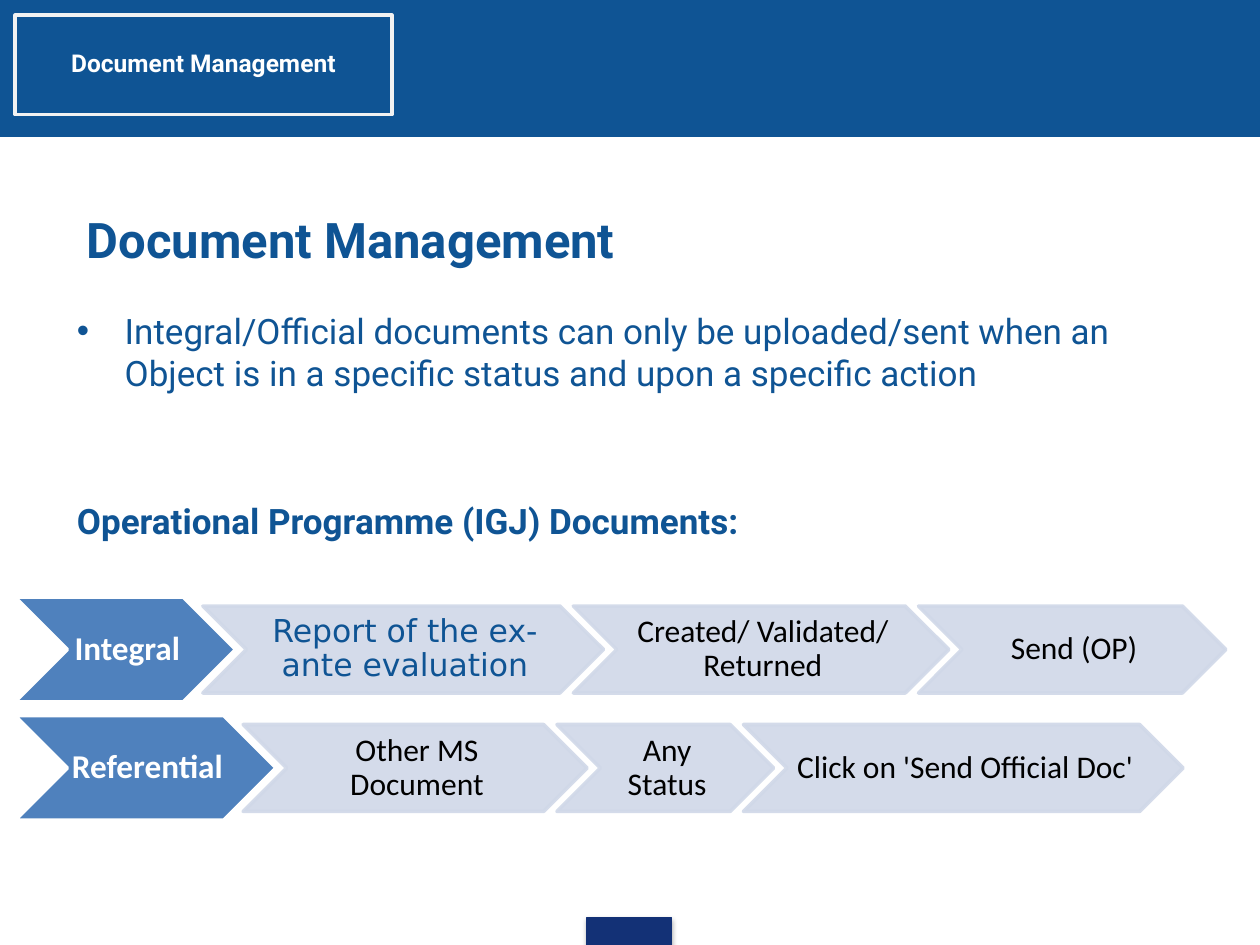
from lxml import etree
from pptx import Presentation
from pptx.dml.color import RGBColor
from pptx.enum import shapes, text
from pptx.oxml import parse_xml
from pptx.oxml.ns import nsdecls, qn
from pptx.util import Inches, Pt

BLUE, NAVY, WHITE = "0F5494", "133176", "FFFFFF"
LEAD = {"size": Pt(19), "name": "Calibri", "color": WHITE, "bold": True}
DETAIL = {"size": Pt(18), "name": "Calibri", "color": "000000"}
REPORT = {"size": Pt(18), "name": "DejaVu Sans", "color": BLUE}
BODY = {"size": Pt(20), "name": "Roboto", "color": BLUE}

ROW_LEFT, LEAD_HEIGHT, DETAIL_HEIGHT = 0.12, 0.83, 0.69
LEAD_OVERLAP, DETAIL_OVERLAP = 0.26, 0.24

# Each row: top, then (label, width, text format) per step
ROWS = [
    (4.74, [("Integral", 1.75, LEAD),
            ("Report of the ex-ante evaluation", 3.18, REPORT),
            ("Created/ Validated/ Returned", 2.98, DETAIL),
            ("Send (OP)", 2.44, DETAIL)]),
    (5.68, [("Referential", 2.07, LEAD),
            ("Other MS Document", 2.73, DETAIL),
            ("Any Status", 1.72, DETAIL),
            ("Click on 'Send Official Doc'", 3.49, DETAIL)]),
]


def rgb(color):
    return RGBColor.from_string(color)


def set_font(paragraph, style):
    for key, value in style.items():
        if key == "color":
            paragraph.font.color.rgb = rgb(value)
        else:
            setattr(paragraph.font, key, value)


def place(shape, left, top, width, height):
    box = {"left": left, "top": top, "width": width, "height": height}
    for side, value in box.items():
        setattr(shape, side, Inches(value))


def set_margins(frame, left, top, right, bottom):
    margins = {"left": left, "top": top, "right": right, "bottom": bottom}
    for side, value in margins.items():
        setattr(frame, f"margin_{side}", Inches(value))


def set_indent(paragraph, margin, first=0, bullet=None):
    properties = paragraph._p.get_or_add_pPr()
    properties.set("marL", str(Inches(margin)))
    properties.set("indent", str(Inches(first)))
    if bullet:
        etree.SubElement(properties, qn("a:buChar"), char=bullet)
    else:
        etree.SubElement(properties, qn("a:buNone"))


def add_block(slide, kind, box, fill, line, line_width):
    block = slide.shapes.add_shape(kind, *map(Inches, box))
    block.shadow.inherit = False
    if fill:
        block.fill.solid()
        block.fill.fore_color.rgb = rgb(fill)
    else:
        block.fill.background()
    block.line.color.rgb = rgb(line)
    block.line.width = Pt(line_width)
    return block


def add_label(block, label, style, margins):
    frame = block.text_frame
    frame.word_wrap = True
    frame.vertical_anchor = text.MSO_ANCHOR.MIDDLE
    set_margins(frame, *margins)
    paragraph = frame.paragraphs[0]
    paragraph.text = label
    paragraph.alignment = text.PP_ALIGN.CENTER
    paragraph.line_spacing = 0.9
    set_font(paragraph, style)


def make_translucent(block, percent):
    for color in block._element.spPr.iter(qn("a:srgbClr")):
        etree.SubElement(color, qn("a:alpha"), val=str(percent * 1000))


def add_soft_shadow(block):
    effects = block._element.spPr.find(qn("a:effectLst"))
    effects.append(parse_xml(
        f'<a:outerShdw {nsdecls("a")} blurRad="{Pt(3.1)}" dist="{Pt(1.8)}" '
        'dir="5400000" rotWithShape="0"><a:srgbClr val="000000">'
        '<a:alpha val="35000"/></a:srgbClr></a:outerShdw>'))


def add_frame_bars(slide):
    rectangle = shapes.MSO_SHAPE.RECTANGLE
    add_block(slide, rectangle, (0, 0, 10, 1.08), BLUE, BLUE, 0.75)
    page_tab = add_block(slide, rectangle, (4.66, 7.28, 0.67, 0.22), NAVY, NAVY, 0.75)
    add_soft_shadow(page_tab)
    section = add_block(slide, rectangle, (0.12, 0.12, 2.99, 0.79), None, "F2F2F2", 2)
    add_label(section, "Document Management",
              {"size": Pt(14), "name": "Roboto", "color": WHITE, "bold": True},
              (0.06, 0.06, 0.06, 0.06))


def fill_title(title):
    place(title, 0.2, 1.39, 9, 1.02)
    title.text_frame.vertical_anchor = text.MSO_ANCHOR.MIDDLE
    paragraph = title.text_frame.paragraphs[0]
    paragraph.text = "Document Management"
    paragraph.alignment = text.PP_ALIGN.LEFT
    set_indent(paragraph, 0.39)
    set_font(paragraph, {**BODY, "size": Pt(28), "bold": True})


def fill_body(body):
    place(body, 0.51, 2.41, 9, 4.21)
    rule = body.text_frame.paragraphs[0]
    rule.text = ("Integral/Official documents can only be uploaded/sent when an "
                 "Object is in a specific status and upon a specific action")
    set_indent(rule, 0.38, -0.38, "•")
    rule.space_before = Pt(0)
    set_font(rule, BODY)

    heading = body.text_frame.add_paragraph()
    heading.text = "Operational Programme (IGJ) Documents:"
    set_indent(heading, 0)
    heading.space_before = Pt(60)
    set_font(heading, {**BODY, "bold": True})


def add_process_row(slide, top, steps):
    left = ROW_LEFT
    for label, width, style in steps:
        is_lead = style is LEAD
        height = LEAD_HEIGHT if is_lead else DETAIL_HEIGHT
        box = (left, top + (LEAD_HEIGHT - height) / 2, width, height)
        fill, line = ("4F81BD", WHITE) if is_lead else ("D0D8E8", "D0D8E8")
        step = add_block(slide, shapes.MSO_SHAPE.CHEVRON, box, fill, line, 2)
        if not is_lead:
            make_translucent(step, 90)
        add_label(step, label, style, (0.03, 0.01, 0, 0.01))
        left += width - (LEAD_OVERLAP if is_lead else DETAIL_OVERLAP)


def main():
    deck = Presentation()
    deck.slide_width, deck.slide_height = Inches(10), Inches(7.5)
    slide = deck.slides.add_slide(deck.slide_layouts[1])
    add_frame_bars(slide)
    fill_title(slide.shapes.title)
    fill_body(slide.placeholders[1])
    for top, steps in ROWS:
        add_process_row(slide, top, steps)
    deck.save("out.pptx")


if __name__ == "__main__":
    main()
